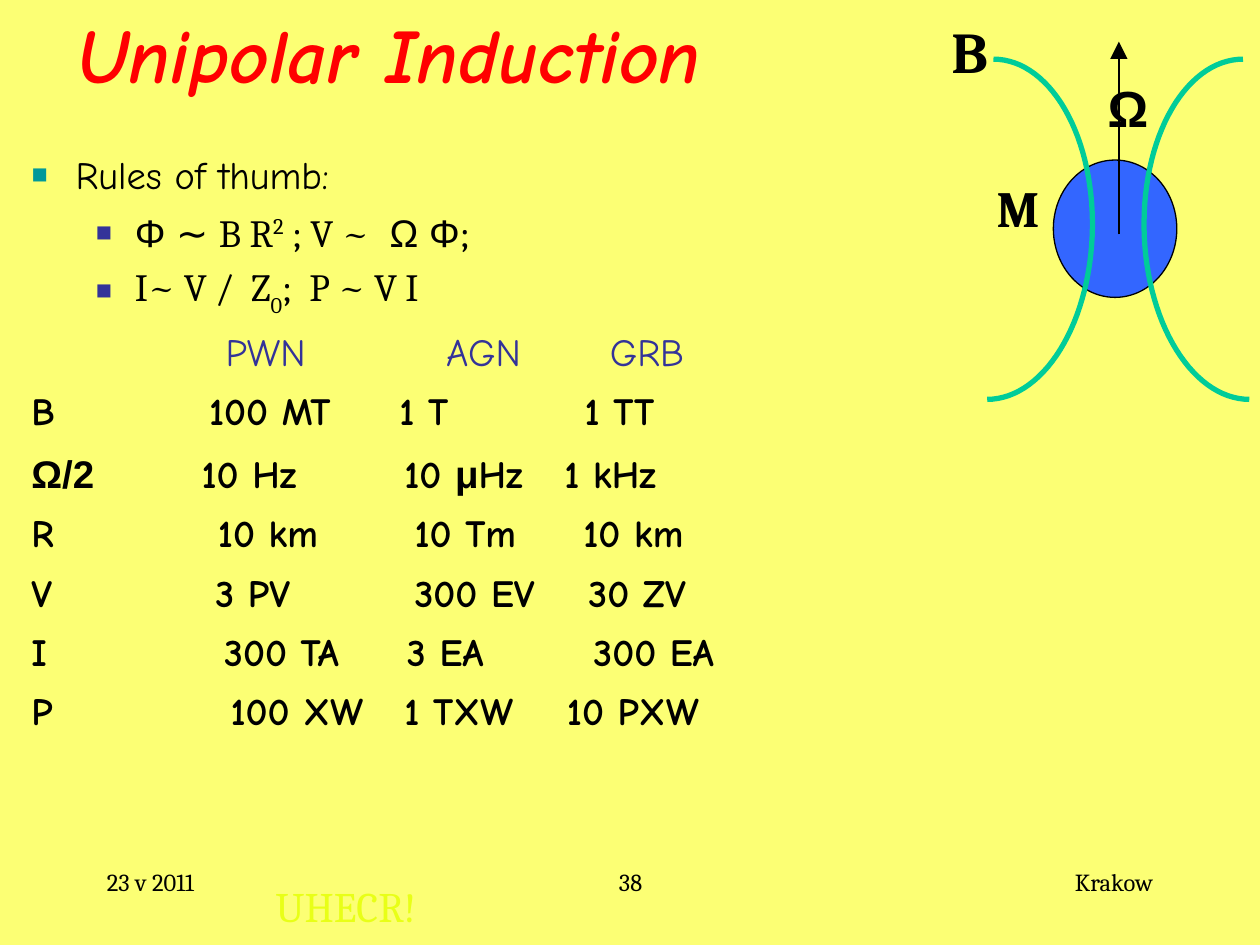
from dataclasses import dataclass
from math import cos, pi, sin

from lxml import etree
from pptx import Presentation
from pptx.dml.color import RGBColor
from pptx.enum.shapes import MSO_CONNECTOR, MSO_SHAPE
from pptx.enum.text import MSO_ANCHOR, MSO_AUTO_SIZE, PP_ALIGN
from pptx.oxml.ns import qn
from pptx.util import Inches, Pt

LEFT, CENTER, RIGHT = PP_ALIGN.LEFT, PP_ALIGN.CENTER, PP_ALIGN.RIGHT
TOP, MIDDLE = MSO_ANCHOR.TOP, MSO_ANCHOR.MIDDLE
NO_FIT = MSO_AUTO_SIZE.NONE
OVAL, STRAIGHT = MSO_SHAPE.OVAL, MSO_CONNECTOR.STRAIGHT


@dataclass(frozen=True)
class Theme:
    page: str = "FCFF74"
    ink: str = "000000"
    title: str = "FF0000"
    heading: str = "333399"
    bullet: str = "009999"
    star: str = "3366FF"
    field: str = "00CC99"
    remark: str = "E8FF17"
    hand: str = "Comic Neue"
    serif: str = "Cambria"
    sans: str = "Arial"
    title_size: float = 44
    body_size: float = 22
    remark_size: float = 24
    footer_size: float = 14
    field_size: float = 33
    label_size: float = 29


THEME = Theme()

# Each row: label, then (text, tab stop in inches) for PWN, AGN and GRB
HEADINGS = ("", ("PWN", 1.54), ("AGN", 3.29), ("GRB", 4.59))
ROWS = [
    ("B", ("100 MT", 1.41), ("1 T", 2.92), ("1 TT", 4.39)),
    ("Ω/2", ("10 Hz", 1.35), ("10 μHz", 2.96), ("1 kHz", 4.23)),
    ("R", ("10 km", 1.48), ("10 Tm", 3.04), ("10 km", 4.38)),
    ("V", ("3 PV", 1.46), ("300 EV", 3.04), ("30 ZV", 4.42)),
    ("I", ("300 TA", 1.53), ("3 EA", 2.98), ("300 EA", 4.46)),
    ("P", ("100 XW", 1.58), ("1 TXW", 2.96), ("10 PXW", 4.25)),
]


def rgb(value):
    return RGBColor.from_string(value)


def place(shape, box):
    shape.left, shape.top, shape.width, shape.height = map(Inches, box)


def add_span(para, text, font=THEME.hand, size=THEME.body_size, color=THEME.ink,
             bold=False, italic=False, baseline=0, tracking=0):
    span = para.add_run()
    span.text = text
    span.font.name, span.font.size = font, Pt(size)
    span.font.bold, span.font.italic = bold, italic
    span.font.color.rgb = rgb(color)
    properties = span.font._element
    if baseline:
        properties.set("baseline", str(baseline * 1000))
    if tracking:
        properties.set("spc", str(int(tracking * 100)))
    for tag in ("a:ea", "a:cs"):
        etree.SubElement(properties, qn(tag), typeface=font)


def set_frame(frame, insets=(0.1, 0.05, 0.1, 0.05), anchor=TOP, wrap=True):
    frame.margin_left, frame.margin_top, frame.margin_right, frame.margin_bottom = map(Inches, insets)
    frame.vertical_anchor, frame.word_wrap, frame.auto_size = anchor, wrap, NO_FIT


def add_label(page, box, text, align=LEFT, spacing=1.0, insets=(0.1, 0.05, 0.1, 0.05),
              anchor=TOP, wrap=True, **style):
    shape = page.shapes.add_textbox(*map(Inches, box))
    set_frame(shape.text_frame, insets, anchor, wrap)
    para = shape.text_frame.paragraphs[0]
    para.alignment, para.line_spacing = align, spacing
    add_span(para, text, **style)


def format_para(para, before=7.5, spacing=1.0):
    para.alignment, para.line_spacing = LEFT, spacing
    para.space_before, para.space_after = Pt(before), Pt(0)
    return para._p.get_or_add_pPr()


def add_bullet(properties, margin, hanging, color):
    properties.set("marL", str(Inches(margin)))
    properties.set("indent", str(-Inches(hanging)))
    fill = etree.SubElement(properties, qn("a:buClr"))
    etree.SubElement(fill, qn("a:srgbClr"), val=color)
    etree.SubElement(properties, qn("a:buSzPct"), val="70000")
    etree.SubElement(properties, qn("a:buFont"), typeface=THEME.sans)
    etree.SubElement(properties, qn("a:buChar"), char="■")


def add_title(page, box):
    title = page.shapes.title
    place(title, box)
    set_frame(title.text_frame, (0, 0, 0, 0), MIDDLE)
    para = title.text_frame.paragraphs[0]
    para.alignment = CENTER
    add_span(para, "Unipolar Induction", size=THEME.title_size, color=THEME.title,
             bold=True, italic=True)


def add_rules(page, box):
    body = page.placeholders[1]
    place(body, box)
    frame = body.text_frame
    set_frame(frame, (0.21, 0.92, 0.09, 0.04))
    para = frame.paragraphs[0]
    add_bullet(format_para(para, before=0), 0.35, 0.35, THEME.bullet)
    add_span(para, "Rules of thumb:")

    # Formulas, with slightly widened gaps between the terms
    sans, serif = {"font": THEME.sans}, {"font": THEME.serif}
    gap = {**serif, "tracking": 4.9}
    formulas = [
        (1.08, [("Φ ∼ ", sans), ("B R", serif), ("2", {**serif, "baseline": 33}),
                (" ; V ~", serif), (" ", {**serif, "tracking": 6.9}), ("Ω Φ", sans), (";", serif)]),
        (1.0, [("I~ V /", serif), (" ", gap), ("Z", serif), ("0", {**serif, "baseline": -33}),
               (";", serif), (" ", gap), ("P ~ V I", serif)]),
    ]
    for spacing, spans in formulas:
        para = frame.add_paragraph()
        para.level = 1
        add_bullet(format_para(para, 4.4, spacing), 0.82, 0.31, THEME.heading)
        for text, style in spans:
            add_span(para, text, **style)


def add_row(para, row, before=7.5, **style):
    label, *cells = row
    greek = label.startswith("Ω")
    properties = format_para(para, before, 1.08 if greek else 1.0)
    stops = etree.SubElement(properties, qn("a:tabLst"))
    for _, stop in cells:
        etree.SubElement(stops, qn("a:tab"), pos=str(Inches(stop)), algn="l")
    if label:
        add_span(para, label, font=THEME.sans if greek else THEME.hand, **style)
    for text, _ in cells:
        start, micro, rest = text.partition("μ")
        add_span(para, "\t" + start, **style)
        if micro:
            add_span(para, micro, font=THEME.sans, **style)
            add_span(para, rest, **style)


def add_values(page, box):
    frame = page.shapes.add_textbox(*map(Inches, box)).text_frame
    set_frame(frame, (0.21, 0, 0.09, 0.04))
    add_row(frame.paragraphs[0], HEADINGS, before=0, color=THEME.heading)
    for row in ROWS:
        add_row(frame.add_paragraph(), row, bold=True)


def add_field_line(page, center, middle, side):
    """Draw half an ellipse, slightly sheared, bulging to the given side."""
    radius_x, radius_y, shear, steps = 0.81, 1.35, 0.025, 60
    angles = [pi * (step / steps - 0.5) for step in range(steps + 1)]
    points = [(Inches(center + side * (radius_x * cos(angle) - shear * sin(angle))),
               Inches(middle + radius_y * sin(angle))) for angle in angles]
    builder = page.shapes.build_freeform(*points[0])
    builder.add_line_segments(points[1:], close=False)
    curve = builder.convert_to_shape()
    curve.shadow.inherit = False
    curve.fill.background()
    curve.line.color.rgb, curve.line.width = rgb(THEME.field), Pt(3)


def add_star(page, box):
    left, top, width, _ = box
    star = page.shapes.add_shape(OVAL, *map(Inches, (left + 0.9, top + 1.15, 0.98, 1.09)))
    star.shadow.inherit = False
    star.fill.solid()
    star.fill.fore_color.rgb = rgb(THEME.star)
    star.line.color.rgb, star.line.width = rgb(THEME.ink), Pt(0.75)

    # Field lines on both sides of the rotation axis
    add_field_line(page, left + 0.4, top + 1.7, 1)
    axis = page.shapes.add_connector(
        STRAIGHT, *map(Inches, (left + 1.42, top + 1.74, left + 1.42, top + 0.21)))
    axis.line.color.rgb, axis.line.width = rgb(THEME.ink), Pt(0.75)
    etree.SubElement(axis.line._get_or_add_ln(), qn("a:tailEnd"), type="triangle", w="lg", len="lg")
    etree.SubElement(axis._element.spPr, qn("a:effectLst"))
    add_field_line(page, left + width - 0.03, top + 1.7, -1)

    # Field, mass and spin labels
    bold = {"bold": True, "wrap": False}
    tight = {**bold, "insets": (0, 0, 0, 0), "size": THEME.label_size}
    add_label(page, (left, top, 0.49, 0.62), "B", font=THEME.serif, size=THEME.field_size,
              spacing=0.94, insets=(0.09, 0.04, 0.09, 0.04), anchor=MIDDLE, **bold)
    add_label(page, (left + 0.45, top + 1.32, 0.38, 0.46), "M", font=THEME.serif,
              spacing=0.94, **tight)
    add_label(page, (left + 1.33, top + 0.45, 0.31, 0.52), "Ω", font=THEME.sans,
              spacing=1.08, **tight)


def add_footer(page, box):
    left, top, _, height = box
    parts = [(0, 2.08, "23 v 2011", LEFT), (2.67, 3.17, "38", CENTER), (6.42, 2.08, "Krakow", RIGHT)]
    for offset, width, text, align in parts:
        add_label(page, (left + offset, top, width, height), text, align,
                  font=THEME.serif, size=THEME.footer_size)
    add_label(page, (left + 1.34, top + 0.11, 1.4, 0.55), "UHECR!",
              font=THEME.serif, size=THEME.remark_size, color=THEME.remark)


def main():
    deck = Presentation()
    deck.slide_width, deck.slide_height = Inches(10), Inches(7.5)
    page = deck.slides.add_slide(deck.slide_layouts[1])
    page.background.fill.solid()
    page.background.fill.fore_color.rgb = rgb(THEME.page)
    add_footer(page, (0.75, 6.83, 8.5, 0.5))
    add_star(page, (7.46, 0.12, 2.46, 3.05))
    add_rules(page, (0.04, 0.28, 9.86, 2.32))
    add_values(page, (0.04, 2.6, 9.86, 4.23))
    add_title(page, (0, 0, 6.18, 0.83))
    deck.save("out.pptx")


if __name__ == "__main__":
    main()
